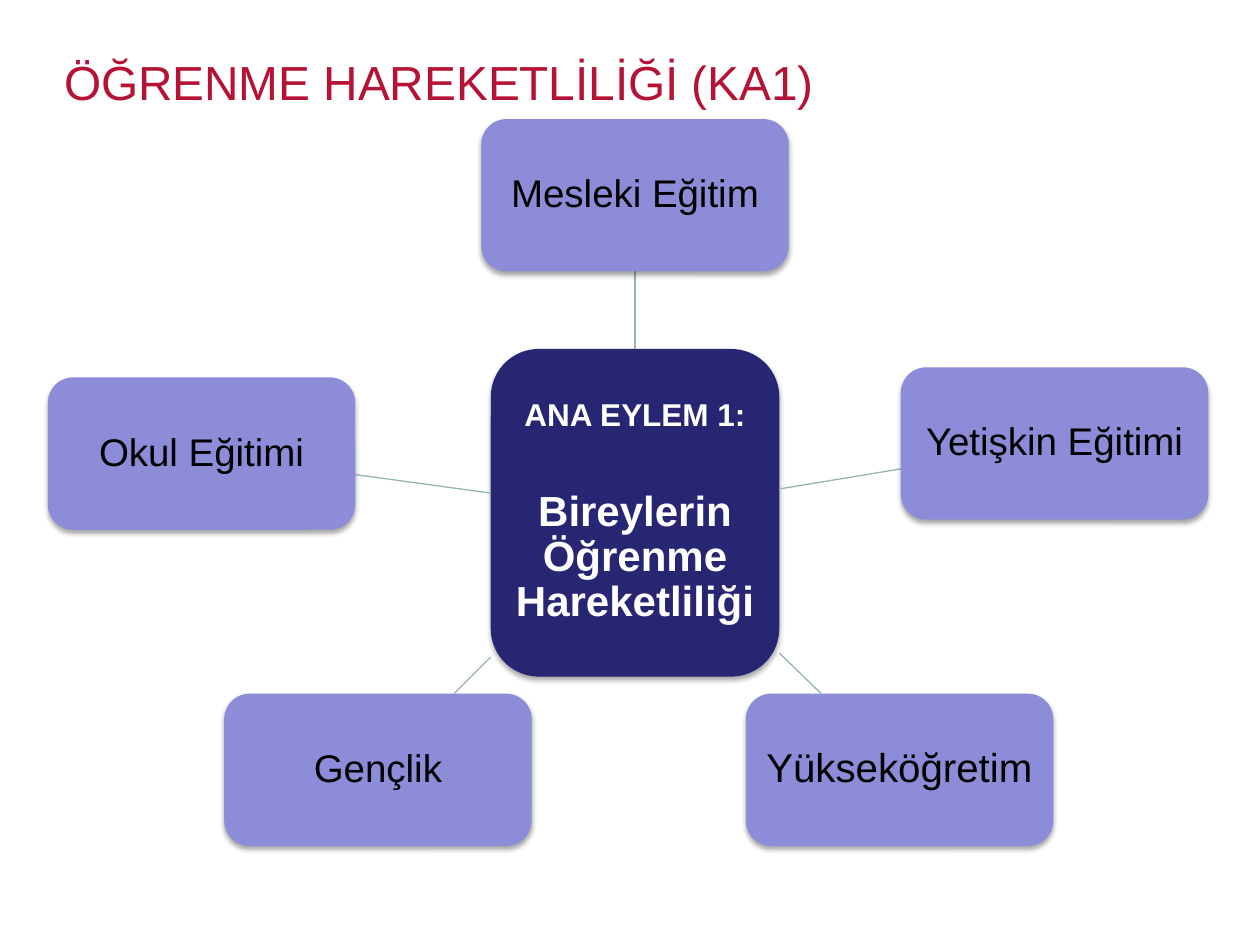
from dataclasses import dataclass
from typing import NamedTuple

from lxml import etree
from pptx import Presentation, util as u
from pptx.dml.color import RGBColor
from pptx.enum import shapes, text
from pptx.oxml import ns

# The slide is a grid of 100 columns by 75 rows
SLIDE_WIDTH, SLIDE_HEIGHT = u.Inches(10), u.Inches(7.5)
COLUMN, ROW = SLIDE_WIDTH / 100, SLIDE_HEIGHT / 75


@dataclass(frozen=True)
class Theme:
    font: str = "Arial"
    title: str = "B61235"
    hub: str = "262673"
    topic: str = "8C8CD8"
    line: str = "96B3B6"
    light: str = "FFFFFF"
    dark: str = "000000"
    title_size: float = 27.3
    kicker_size: float = 18
    hub_size: float = 24
    topic_size: float = 22
    large_topic_size: float = 23
    line_width: float = 0.75


THEME = Theme()


class Line(NamedTuple):
    words: str
    size: float
    color: str
    bold: bool = False
    space_before: float = 0


class Box(NamedTuple):
    """A rounded box, placed by its centre in columns and rows."""
    x: float
    y: float
    width: float
    height: float
    fill: str
    inset: float
    lines: tuple[Line, ...]


def topic(x: float, y: float, words: str, size: float = THEME.topic_size) -> Box:
    return Box(x, y, 24.4, 12.1, THEME.topic, 0.6, (Line(words, size, THEME.dark),))


HUB = Box(50.4, 40.7, 22.9, 26, THEME.hub, 0.5, (
    Line("ANA EYLEM 1:", THEME.kicker_size, THEME.light, True),
    Line("Bireylerin Öğrenme Hareketliliği", THEME.hub_size, THEME.light, True, 32),
))
TOPICS = (
    topic(50.4, 15.5, "Mesleki Eğitim"),
    topic(83.7, 35.2, "Yetişkin Eğitimi"),
    topic(71.4, 61.1, "Yükseköğretim", THEME.large_topic_size),
    topic(30, 61.1, "Gençlik"),
    topic(16, 36, "Okul Eğitimi"),
)


def across(columns: float) -> u.Emu:
    return u.Emu(round(columns * COLUMN))


def down(rows: float) -> u.Emu:
    return u.Emu(round(rows * ROW))


def add_run(paragraph, line: Line) -> None:
    run = paragraph.add_run()
    run.text = line.words
    run.font.name = THEME.font
    run.font.size = u.Pt(line.size)
    run.font.bold = line.bold
    run.font.color.rgb = RGBColor.from_string(line.color)


def add_soft_shadow(shape) -> None:
    shape.shadow.inherit = False
    effects = shape._element.spPr.find(ns.qn("a:effectLst"))
    shadow = etree.SubElement(
        effects, ns.qn("a:outerShdw"), blurRad=str(u.Pt(3.1)),
        dist=str(u.Pt(1.8)), dir="5400000", rotWithShape="0")
    color = etree.SubElement(shadow, ns.qn("a:srgbClr"), val=THEME.dark)
    etree.SubElement(color, ns.qn("a:alpha"), val="35000")


def add_box(slide, box: Box) -> None:
    shape = slide.shapes.add_shape(
        shapes.MSO_SHAPE.ROUNDED_RECTANGLE,
        across(box.x - box.width / 2), down(box.y - box.height / 2),
        across(box.width), down(box.height))
    shape.fill.solid()
    shape.fill.fore_color.rgb = RGBColor.from_string(box.fill)
    shape.line.fill.background()
    add_soft_shadow(shape)
    frame = shape.text_frame
    frame.word_wrap = True
    frame.vertical_anchor = text.MSO_ANCHOR.MIDDLE
    frame.margin_left = frame.margin_right = across(box.inset)
    frame.margin_top = frame.margin_bottom = down(box.inset)
    for index, line in enumerate(box.lines):
        paragraph = frame.add_paragraph() if index else frame.paragraphs[0]
        paragraph.alignment = text.PP_ALIGN.CENTER
        paragraph.line_spacing = 0.9
        if line.space_before:
            paragraph.space_before = u.Pt(line.space_before)
        add_run(paragraph, line)


def edge_toward(box: Box, other: Box) -> tuple[u.Emu, u.Emu]:
    """Where the line between two centres leaves the first box."""
    dx, dy = other.x - box.x, other.y - box.y
    reach = min(size / 2 / abs(step)
                for size, step in ((box.width, dx), (box.height, dy)) if step)
    return across(box.x + dx * reach), down(box.y + dy * reach)


def add_spoke(slide, hub: Box, end: Box) -> None:
    connector = slide.shapes.add_connector(
        shapes.MSO_CONNECTOR.STRAIGHT,
        *edge_toward(hub, end), *edge_toward(end, hub))
    connector.line.color.rgb = RGBColor.from_string(THEME.line)
    connector.line.width = u.Pt(THEME.line_width)
    etree.SubElement(connector._element.spPr, ns.qn("a:effectLst"))


def add_title(slide, line: Line) -> None:
    title = slide.shapes.add_textbox(across(4.1), down(3.3), across(91.8), down(6.7))
    frame = title.text_frame
    frame.word_wrap = True
    frame.margin_top = down(0.9)
    add_run(frame.paragraphs[0], line)


def main() -> None:
    presentation = Presentation()
    presentation.slide_width, presentation.slide_height = SLIDE_WIDTH, SLIDE_HEIGHT
    slide = presentation.slides.add_slide(presentation.slide_layouts[6])

    # Hub with its five fields
    add_box(slide, HUB)
    for field in TOPICS:
        add_spoke(slide, HUB, field)
        add_box(slide, field)

    # Heading
    add_title(slide, Line("ÖĞRENME HAREKETLİLİĞİ (KA1)", THEME.title_size, THEME.title))

    presentation.save("out.pptx")


if __name__ == "__main__":
    main()
